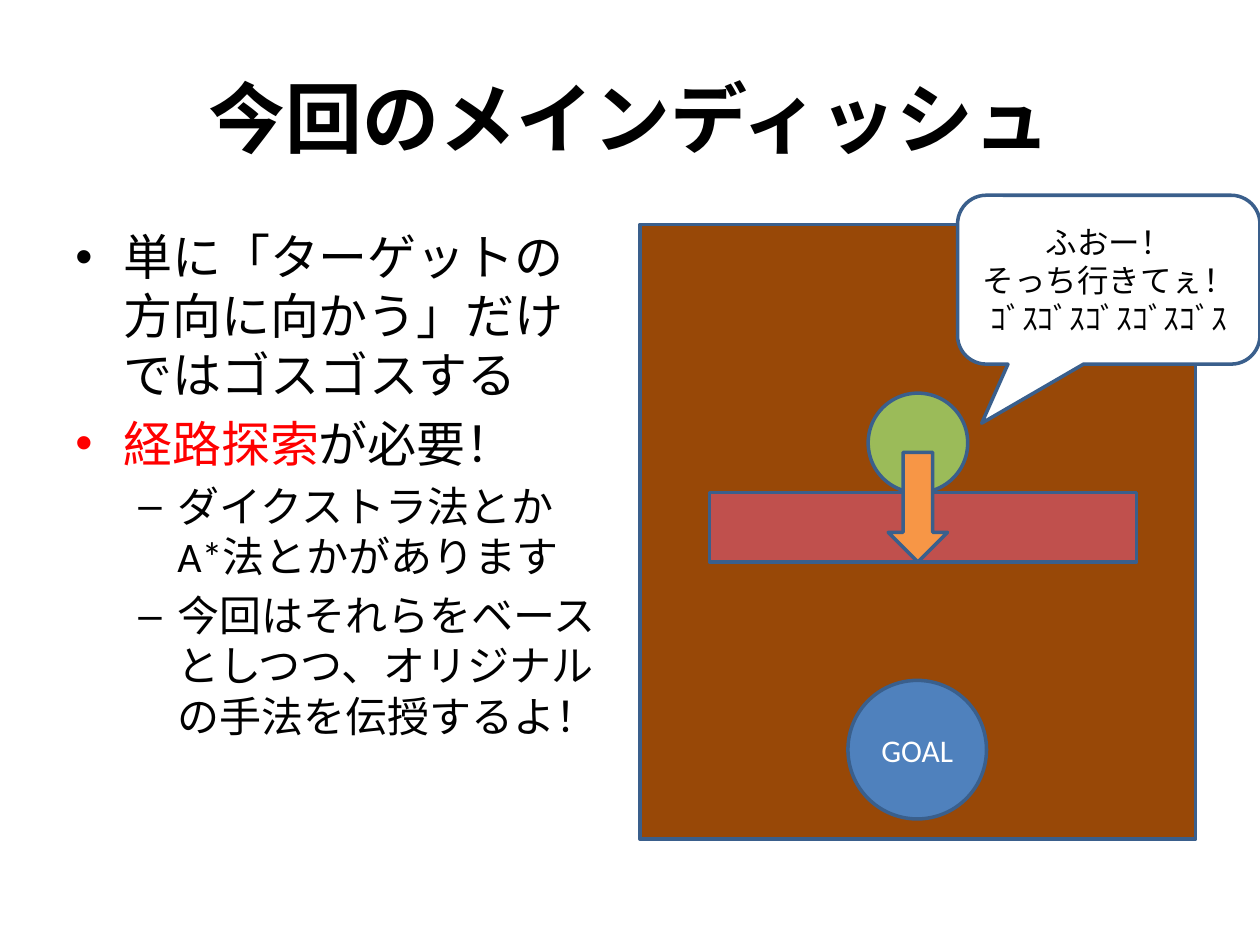
from dataclasses import dataclass
from typing import Optional

import pptx
import pptx.util
from lxml import etree
from pptx.dml.color import RGBColor
from pptx.enum.shapes import MSO_SHAPE
from pptx.enum.text import MSO_ANCHOR, PP_ALIGN
from pptx.oxml.ns import qn
from pptx.util import Inches, Pt

BLACK = RGBColor(0x00, 0x00, 0x00)
WHITE = RGBColor(0xFF, 0xFF, 0xFF)
RED = RGBColor(0xFF, 0x00, 0x00)
BROWN = RGBColor(0x98, 0x48, 0x07)
BRICK = RGBColor(0xC0, 0x50, 0x4D)
BLUE = RGBColor(0x4F, 0x81, 0xBD)
GREEN = RGBColor(0x9B, 0xBB, 0x59)
ORANGE = RGBColor(0xF7, 0x96, 0x46)
OUTLINE = RGBColor(0x3A, 0x5F, 0x8C)

LATIN_FONT = "Calibri"
JAPANESE_FONT = "Noto Sans CJK JP"


@dataclass
class Item:
    runs: list[tuple[str, RGBColor]]
    level: int = 0


@dataclass
class Figure:
    kind: MSO_SHAPE
    at: tuple[float, float, float, float]
    fill: RGBColor
    text: str = ""
    color: RGBColor = WHITE
    adjustments: Optional[tuple[float, ...]] = None


@dataclass
class Level:
    size: int
    indent: float
    hang: float
    bullet: str


LEVELS = [Level(28, 0.38, 0.38, "•"), Level(24, 0.81, 0.31, "–")]

ITEMS = [
    Item([("単に「ターゲットの方向に向かう」だけではゴスゴスする", BLACK)]),
    Item([("経路探索", RED), ("が必要！", BLACK)]),
    Item([("ダイクストラ法とか\nA*法とかがあります", BLACK)], 1),
    Item([("今回はそれらをベースとしつつ、オリジナルの手法を伝授するよ！", BLACK)], 1),
]

FIGURES = [
    # Field, wall and goal
    Figure(MSO_SHAPE.RECTANGLE, (5.08, 1.78, 4.41, 4.88), BROWN),
    Figure(MSO_SHAPE.RECTANGLE, (5.63, 3.91, 3.39, 0.55), BRICK),
    Figure(MSO_SHAPE.OVAL, (6.73, 5.4, 1.1, 1.1), BLUE, "GOAL"),
    # Walker, its direction and its speech
    Figure(MSO_SHAPE.OVAL, (6.89, 3.12, 0.79, 0.79), GREEN),
    Figure(MSO_SHAPE.DOWN_ARROW, (7.05, 3.59, 0.47, 0.87), ORANGE),
    Figure(MSO_SHAPE.ROUNDED_RECTANGULAR_CALLOUT, (7.6, 1.55, 2.4, 1.34), WHITE,
           "ふおー！\nそっち行きてぇ！\nｺﾞｽｺﾞｽｺﾞｽｺﾞｽｺﾞｽ", BLACK, (-0.42, 0.85, 0.17)),
]


def add_text(p, text: str, size: int, color: RGBColor, bold: bool = False) -> None:
    """Add text to a paragraph, with a line break at each newline."""
    for i, line in enumerate(text.split("\n")):
        if i:
            p.add_line_break()
        r = p.add_run()
        r.text = line
        formats = {"name": LATIN_FONT, "size": Pt(size), "bold": bold}
        for name, value in formats.items():
            setattr(r.font, name, value)
        r.font.color.rgb = color
        rPr = r._r.get_or_add_rPr()
        rPr.find(qn("a:latin")).addnext(
            etree.Element(qn("a:ea"), typeface=JAPANESE_FONT))


def add_box(s, at: tuple[float, float, float, float], anchor: MSO_ANCHOR):
    sp = s.shapes.add_textbox(*map(Inches, at))
    tf = sp.text_frame
    tf.word_wrap = True
    tf.vertical_anchor = anchor
    return tf


def add_item(p, item: Item) -> None:
    level = LEVELS[item.level]
    p.level = item.level
    p.space_before = Pt(level.size * 0.2)
    pPr = p._p.get_or_add_pPr()
    pPr.set("marL", str(Inches(level.indent)))
    pPr.set("indent", str(-Inches(level.hang)))
    etree.SubElement(pPr, qn("a:buFont"), typeface="Arial")
    etree.SubElement(pPr, qn("a:buChar"), char=level.bullet)
    for text, color in item.runs:
        add_text(p, text, level.size, color)


def add_figure(s, figure: Figure) -> None:
    sp = s.shapes.add_shape(figure.kind, *map(Inches, figure.at))
    sp.shadow.inherit = False
    sp.fill.solid()
    sp.fill.fore_color.rgb = figure.fill
    sp.line.color.rgb = OUTLINE
    sp.line.width = Pt(2)
    for i, value in enumerate(figure.adjustments or ()):
        sp.adjustments[i] = value
    if figure.text:
        tf = sp.text_frame
        tf.word_wrap = True
        tf.vertical_anchor = MSO_ANCHOR.MIDDLE
        p = tf.paragraphs[0]
        p.alignment = PP_ALIGN.CENTER
        add_text(p, figure.text, 18, figure.color)


def main() -> None:
    prs = pptx.Presentation()
    prs.slide_width, prs.slide_height = Inches(10), Inches(7.5)
    s = prs.slides.add_slide(prs.slide_layouts[6])

    # Title
    p = add_box(s, (0.5, 0.3, 9, 1.25), MSO_ANCHOR.MIDDLE).paragraphs[0]
    p.alignment = PP_ALIGN.CENTER
    add_text(p, "今回のメインディッシュ", 44, BLACK, bold=True)

    # Bullet list
    tf = add_box(s, (0.5, 1.75, 4.42, 4.95), MSO_ANCHOR.TOP)
    for i, item in enumerate(ITEMS):
        add_item(tf.add_paragraph() if i else tf.paragraphs[0], item)

    # Path drawing
    for figure in FIGURES:
        add_figure(s, figure)

    prs.save("out.pptx")


if __name__ == "__main__":
    main()
